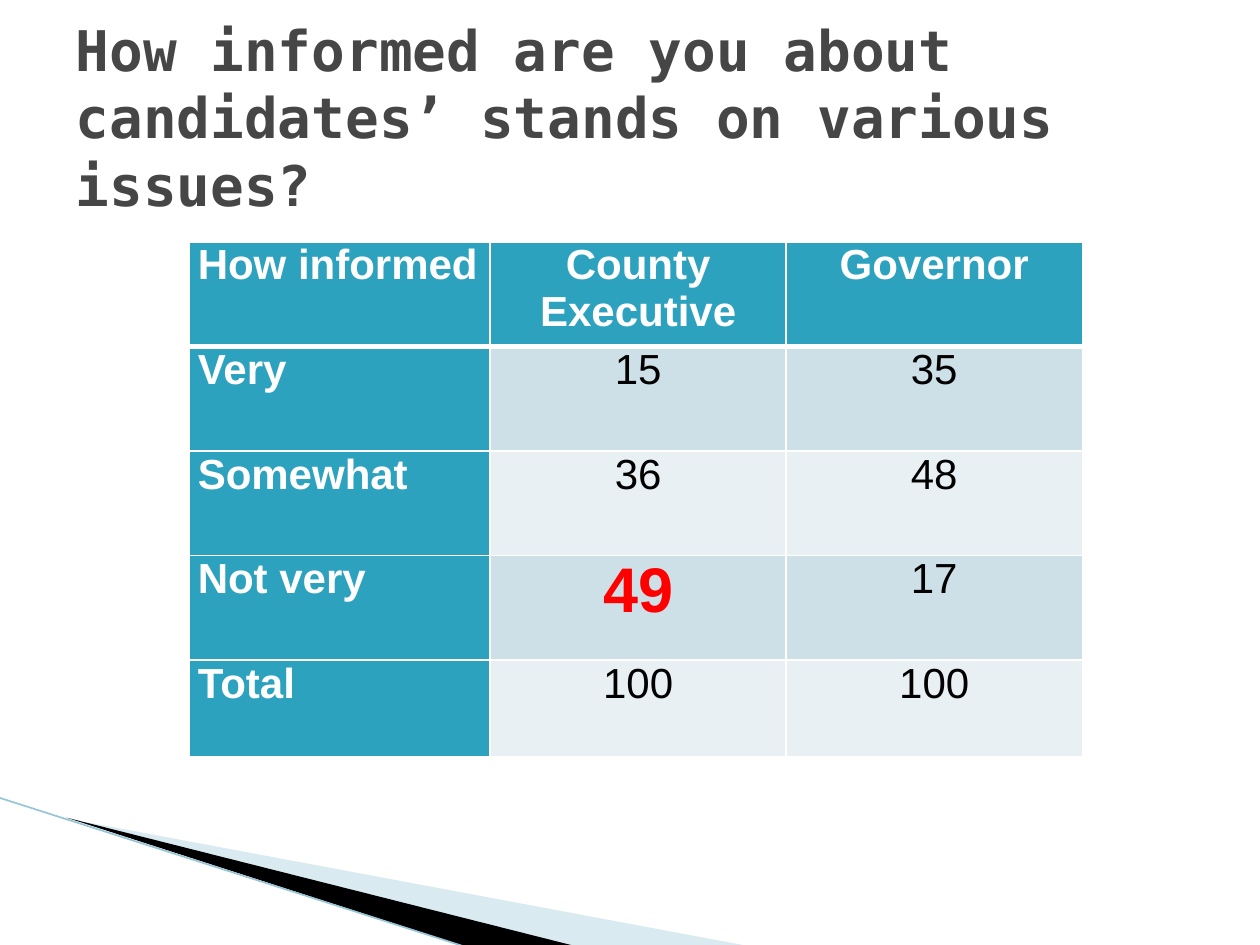
from lxml.etree import SubElement
from pptx import Presentation
from pptx.dml.color import RGBColor
from pptx.enum.shapes import MSO_CONNECTOR
from pptx.enum.text import MSO_ANCHOR, PP_ALIGN
from pptx.oxml import parse_xml
from pptx.oxml.ns import nsdecls, qn
from pptx.util import Inches, Pt

WHITE = RGBColor(0xFF, 0xFF, 0xFF)
BLACK = RGBColor(0, 0, 0)
RED = RGBColor(0xFF, 0, 0)
GREY = RGBColor(0x46, 0x46, 0x46)
TEAL = RGBColor(0x2D, 0xA2, 0xBF)
DARK_BAND = RGBColor(0xCD, 0xE0, 0xE8)
LIGHT_BAND = RGBColor(0xE8, 0xF0, 0xF4)
PALE_BLUE = RGBColor(0xA0, 0xCB, 0xDC)
EDGE_BLUE = RGBColor(0x97, 0xC5, 0xD8)

TITLE = "How informed are you about candidates’ stands on various issues?"
ROWS = [
    ("How informed", "County Executive", "Governor"),
    ("Very", "15", "35"),
    ("Somewhat", "36", "48"),
    ("Not very", "49", "17"),
    ("Total", "100", "100"),
]
HIGHLIGHT = "49"
COLUMN_WIDTHS = [2.39, 2.35, 2.35]
ROW_HEIGHTS = [0.83, 0.83, 0.83, 0.83, 0.77]


def add_wedge(page, points, color, opacity=100):
    corners = [(Inches(x), Inches(y)) for x, y in points]
    builder = page.shapes.build_freeform(*corners[0])
    builder.add_line_segments(corners[1:], close=True)
    wedge = builder.convert_to_shape()
    wedge.shadow.inherit = False
    wedge.fill.solid()
    wedge.fill.fore_color.rgb = color
    wedge.line.fill.background()
    if opacity < 100:
        tint = wedge.fill._xPr.find(qn("a:solidFill"))[0]
        SubElement(tint, qn("a:alpha")).set("val", str(opacity * 1000))


def add_edge(page, start, end):
    edge = page.shapes.add_connector(
        MSO_CONNECTOR.STRAIGHT, *map(Inches, start + end))
    edge.line.color.rgb = EDGE_BLUE
    edge.line.width = Pt(0.95)
    SubElement(edge._element.spPr, qn("a:effectLst"))


def set_title(page):
    title = page.shapes.title
    title.left, title.top, title.width, title.height = map(
        Inches, (0.5, 0.3, 9, 1.25))
    frame = title.text_frame
    frame.text = TITLE
    frame.word_wrap = True
    frame.vertical_anchor = MSO_ANCHOR.MIDDLE
    para = frame.paragraphs[0]
    para.alignment = PP_ALIGN.LEFT
    set_font(para, "DejaVu Sans Mono", 32, GREY, True)


def set_font(para, name, size, color, bold):
    font = para.font
    font.name, font.size, font.bold = name, Pt(size), bold
    font.color.rgb = color


def set_borders(cell, bottom_width, top_width):
    """Draw white borders; their elements must come before the cell's fill."""
    widths = {"lnL": 1, "lnR": 1, "lnT": top_width, "lnB": bottom_width}
    properties = cell._tc.get_or_add_tcPr()
    for index, (side, width) in enumerate(widths.items()):
        properties.insert(index, parse_xml(
            f'<a:{side} {nsdecls("a")} w="{Pt(width)}"><a:solidFill>'
            f'<a:srgbClr val="{WHITE}"/></a:solidFill></a:{side}>'))


def fill_cell(cell, text, row, column):
    is_label = row == 0 or column == 0
    cell.margin_left = cell.margin_right = Inches(0.07)
    cell.margin_top = cell.margin_bottom = 0
    cell.fill.solid()
    band = DARK_BAND if row % 2 else LIGHT_BAND
    cell.fill.fore_color.rgb = TEAL if is_label else band
    set_borders(cell, 3 if row == 0 else 1, 3 if row == 1 else 1)
    cell.text = text
    para = cell.text_frame.paragraphs[0]
    para.alignment = PP_ALIGN.CENTER if column else PP_ALIGN.LEFT
    if text == HIGHLIGHT:
        set_font(para, "Arial", 36, RED, True)
    else:
        set_font(para, "Arial", 24, WHITE if is_label else BLACK, is_label)


def add_results_table(page):
    table = page.shapes.add_table(
        len(ROWS), len(COLUMN_WIDTHS), Inches(1.5), Inches(1.92),
        Inches(sum(COLUMN_WIDTHS)), Inches(sum(ROW_HEIGHTS))).table
    for column, width in zip(table.columns, COLUMN_WIDTHS):
        column.width = Inches(width)
    for row, height in zip(table.rows, ROW_HEIGHTS):
        row.height = Inches(height)
    for row, texts in enumerate(ROWS):
        for column, text in enumerate(texts):
            fill_cell(table.cell(row, column), text, row, column)


def main():
    deck = Presentation()
    deck.slide_width, deck.slide_height = Inches(10), Inches(7.5)
    page = deck.slides.add_slide(deck.slide_layouts[5])
    add_wedge(page, [(0.55, 6.5), (5.95, 7.51), (4.56, 7.51)], PALE_BLUE, 40)
    add_wedge(page, [(0.53, 6.49), (4.57, 7.51), (3.72, 7.52)], BLACK)
    add_edge(page, (-0.01, 6.33), (3.71, 7.52))
    add_results_table(page)
    set_title(page)
    deck.save("out.pptx")


if __name__ == "__main__":
    main()
